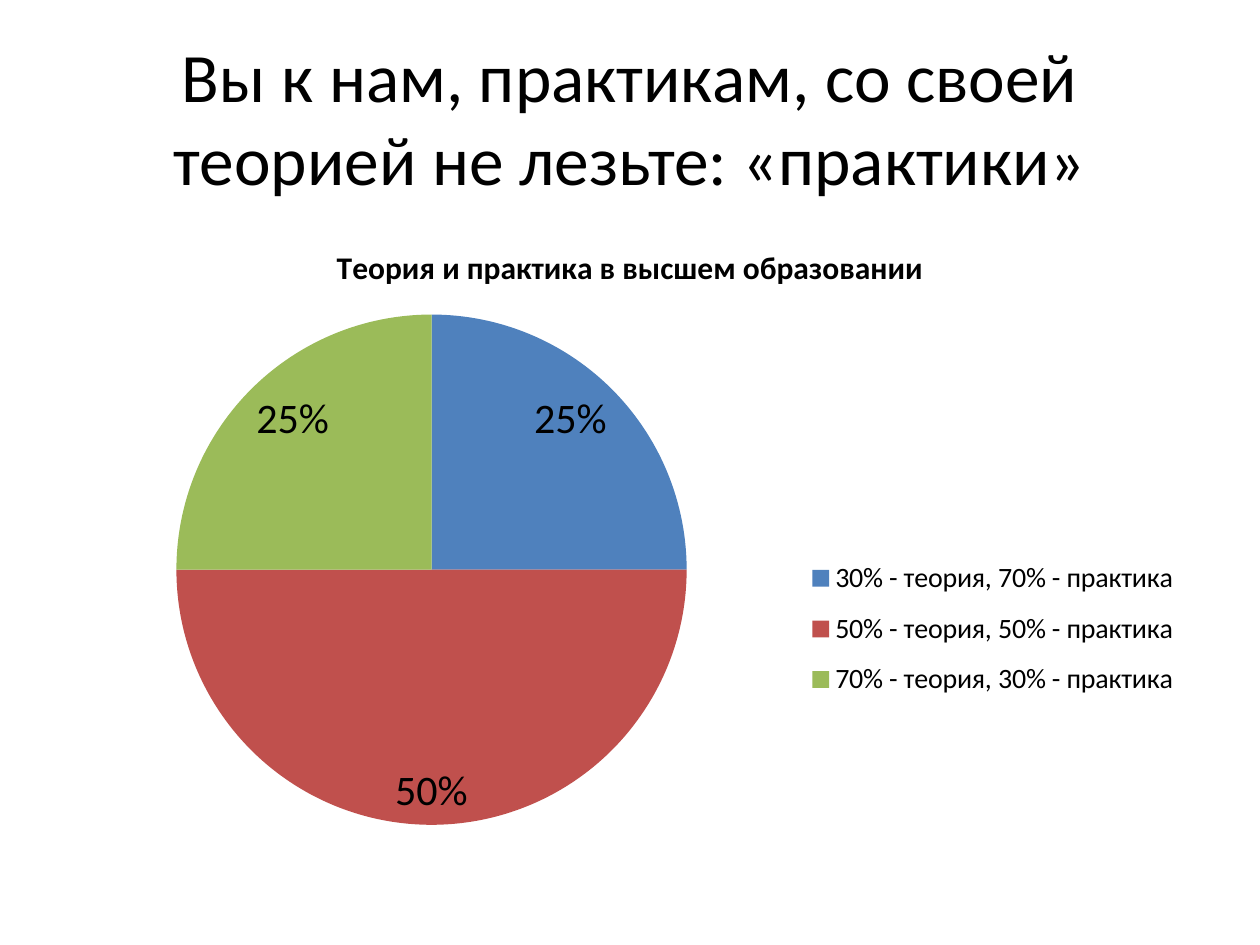
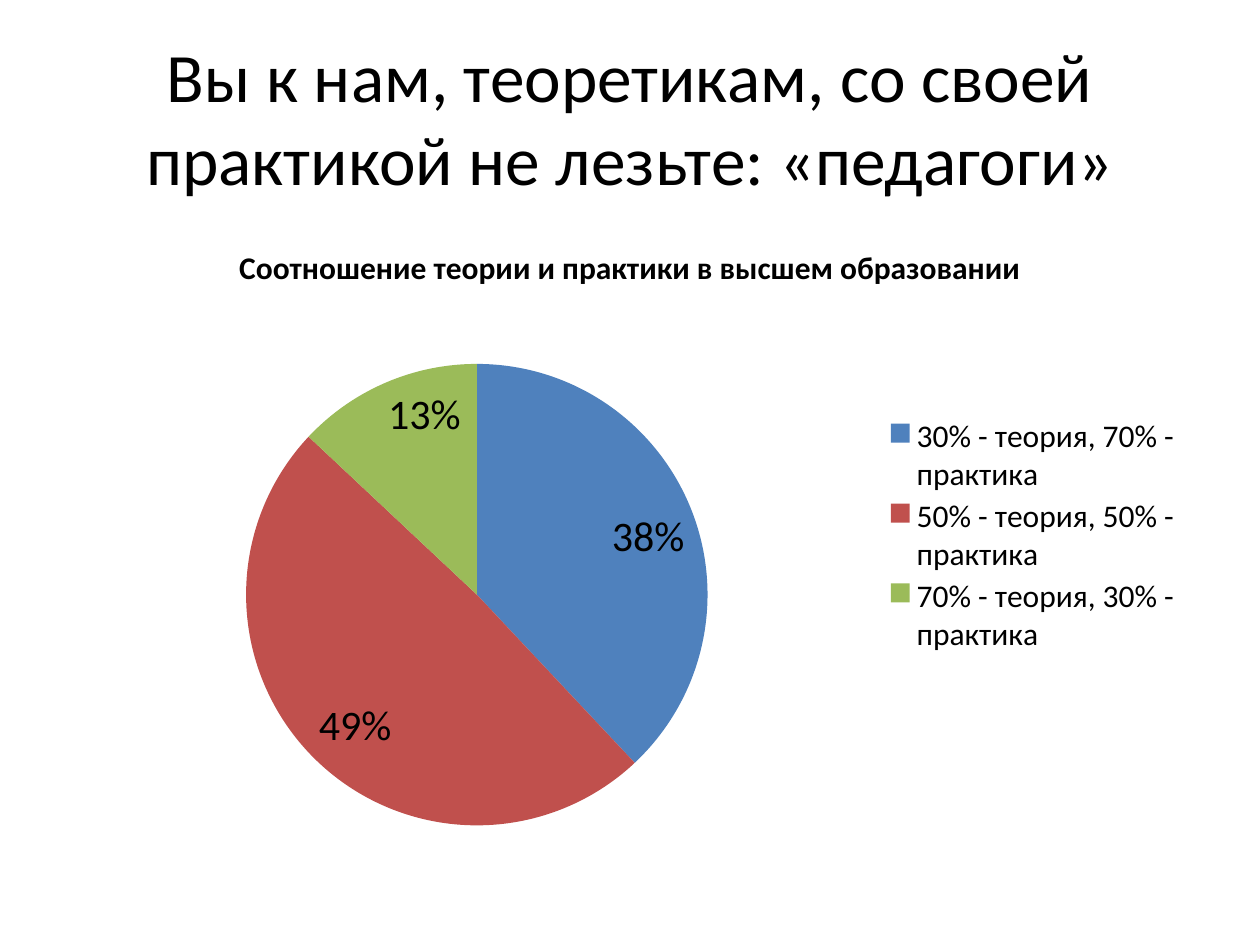
"""Build two slides, each with a title and a pie chart on theory and practice."""
from lxml import etree
from pptx import Presentation
from pptx.chart.data import CategoryChartData
from pptx.dml.color import RGBColor
from pptx.enum import chart as chart_enum, text
from pptx.oxml.ns import qn
from pptx.util import Inches, Pt

FONT = "Calibri"
BLACK = RGBColor(0, 0, 0)
SLICE_COLOURS = (
    RGBColor(0x4F, 0x81, 0xBD),
    RGBColor(0xC0, 0x50, 0x4D),
    RGBColor(0x9B, 0xBB, 0x59),
)
TITLE_AREA = (0.5, 0.3, 9, 1.25)
CHART_AREA = (0.5, 1.75, 9, 4.95)
CATEGORIES = [
    "30% - теория, 70% - практика",
    "50% - теория, 50% - практика",
    "70% - теория, 30% - практика",
]
SLIDES = [
    {
        "title": "Вы к нам, практикам, со своей теорией не лезьте: «практики»",
        "chart": "Теория и практика в высшем образовании",
        "values": (25, 50, 25),
        "legend_size": 16,
        "pie_area": (0.1, 0.15, 0.45, 0.82),
        "legend_area": (0.65, 0.52, 0.34, 0.27),
    },
    {
        "title": "Вы к нам, теоретикам, со своей практикой не лезьте: «педагоги»",
        "chart": "Соотношение теории и практики в высшем образовании",
        "values": (38, 49, 13),
        "legend_size": 18,
        "pie_area": (0.16, 0.23, 0.41, 0.74),
        "legend_area": (0.72, 0.31, 0.27, 0.39),
    },
]


def style_font(font, size, bold=False):
    font.name = FONT
    font.size = Pt(size)
    font.bold = bold
    font.color.rgb = BLACK


def place_chart_part(part, index, area, inner=False):
    for old in part.findall(qn("c:layout")):
        part.remove(old)
    layout = etree.Element(qn("c:layout"))
    manual = etree.SubElement(layout, qn("c:manualLayout"))
    settings = [("layoutTarget", "inner")] if inner else []
    settings += [("xMode", "edge"), ("yMode", "edge")]
    settings += zip("xywh", area)
    for name, value in settings:
        etree.SubElement(manual, qn(f"c:{name}")).set("val", str(value))
    part.insert(index, layout)


def add_title(page, wording):
    box = page.shapes.add_textbox(*map(Inches, TITLE_AREA))
    frame = box.text_frame
    frame.word_wrap = True
    frame.vertical_anchor = text.MSO_ANCHOR.MIDDLE
    para = frame.paragraphs[0]
    para.alignment = text.PP_ALIGN.CENTER
    span = para.add_run()
    span.text = wording
    style_font(span.font, 39.6)


def add_pie(page, content):
    data = CategoryChartData()
    data.categories = CATEGORIES
    data.add_series(content["chart"], content["values"])
    chart = page.shapes.add_chart(
        chart_enum.XL_CHART_TYPE.PIE, *map(Inches, CHART_AREA), data
    ).chart
    style_font(chart.font, 10)

    chart.has_title = True
    span = chart.chart_title.text_frame.paragraphs[0].add_run()
    span.text = content["chart"]
    style_font(span.font, 18, bold=True)

    chart.has_legend = True
    chart.legend.position = chart_enum.XL_LEGEND_POSITION.RIGHT
    chart.legend.include_in_layout = False
    style_font(chart.legend.font, content["legend_size"])

    plot = chart.plots[0]
    plot.vary_by_categories = True
    for index, colour in enumerate(SLICE_COLOURS):
        fill = plot.series[0].points[index].format.fill
        fill.solid()
        fill.fore_color.rgb = colour

    labels = plot.series[0].data_labels
    labels.show_percentage = True
    labels.show_value = False
    labels.number_format = "0%"
    labels.number_format_is_linked = False
    labels.position = chart_enum.XL_LABEL_POSITION.INSIDE_END
    style_font(labels.font, 24)

    root = chart.element
    place_chart_part(root.find(".//" + qn("c:plotArea")), 0, content["pie_area"], inner=True)
    place_chart_part(root.find(".//" + qn("c:legend")), 1, content["legend_area"])


def main():
    deck = Presentation()
    deck.slide_width = Inches(10)
    deck.slide_height = Inches(7.5)
    for content in SLIDES:
        page = deck.slides.add_slide(deck.slide_layouts[6])
        add_title(page, content["title"])
        add_pie(page, content)
    deck.save("out.pptx")


if __name__ == "__main__":
    main()
